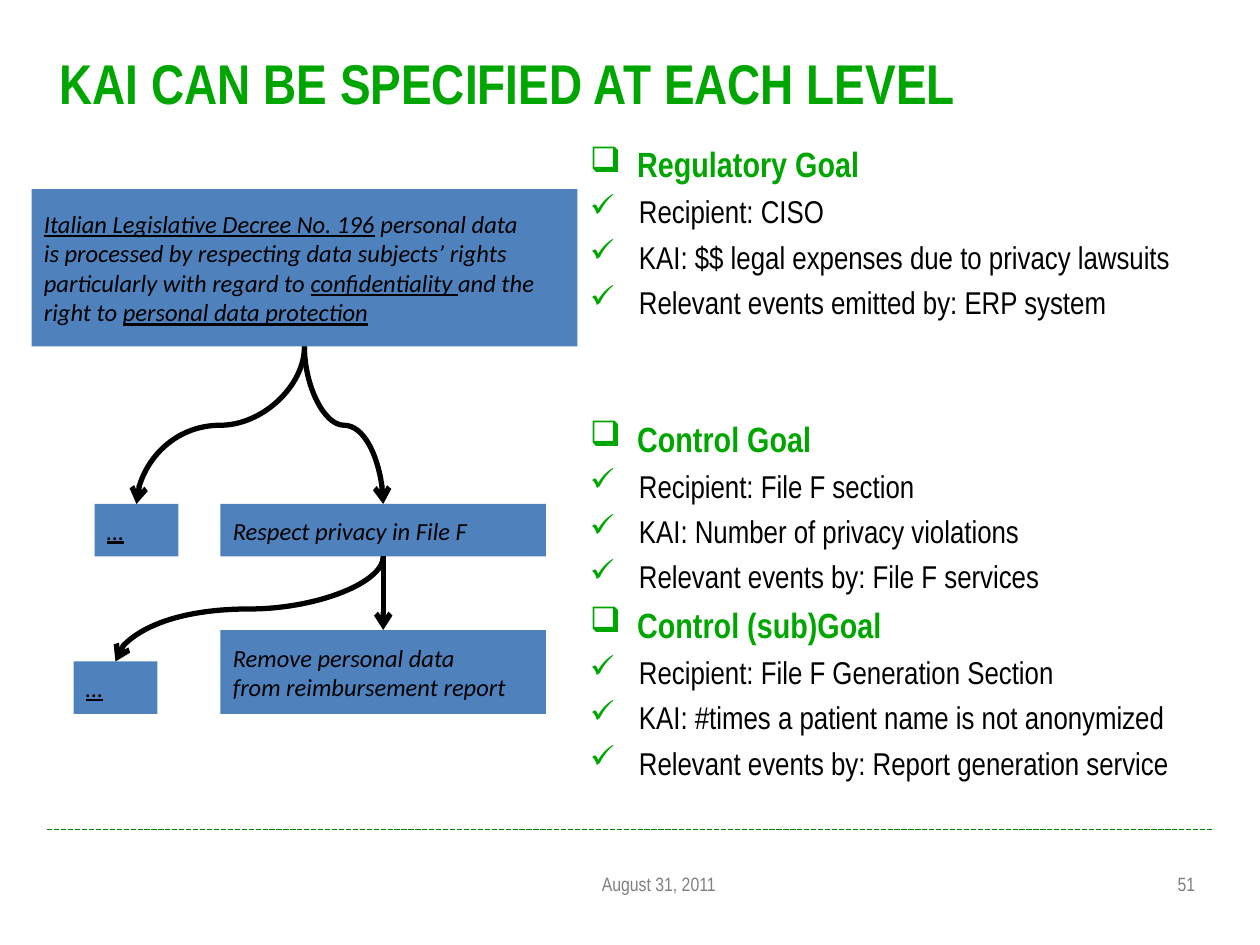
from dataclasses import dataclass

from lxml.etree import SubElement
from pptx import Presentation
from pptx.dml.color import RGBColor
from pptx.enum.dml import MSO_LINE
from pptx.enum.shapes import MSO_CONNECTOR as Link, MSO_SHAPE as Preset
from pptx.enum.text import MSO_ANCHOR as Anchor, PP_ALIGN as Align
from pptx.oxml.ns import qn
from pptx.util import Pt


@dataclass(frozen=True)
class Theme:
    green: RGBColor = RGBColor(0x00, 0xA6, 0x00)
    rule: RGBColor = RGBColor(0x00, 0x80, 0x00)
    box: RGBColor = RGBColor(0x4F, 0x81, 0xBD)
    ink: RGBColor = RGBColor(0, 0, 0)
    grey: RGBColor = RGBColor(0x7F, 0x7F, 0x7F)
    sans: str = "Arial Narrow"
    diagram_font: str = "Calibri"
    title: int = 32
    heading: int = 20
    detail: int = 18
    goal: int = 14
    footer: int = 11


THEME = Theme()

# Each group: gap above its heading, heading, details
INDICATORS = [
    (4.8, "Regulatory Goal", [
        "Recipient: CISO",
        "KAI: $$ legal expenses due to privacy lawsuits",
        "Relevant events emitted by: ERP system"]),
    (55, "Control Goal", [
        "Recipient: File F section",
        "KAI: Number of privacy violations",
        "Relevant events by: File F services"]),
    (4.8, "Control (sub)Goal", [
        "Recipient: File F Generation Section",
        "KAI: #times a patient name is not anonymized",
        "Relevant events by: Report generation service"]),
]

# Lines of (text, underlined) runs
DECREE = [
    [("Italian Legislative Decree No. 196", True), (" personal data", False)],
    [("is processed by respecting data subjects’ rights", False)],
    [("particularly with regard to ", False), ("confidentiality ", True), ("and the", False)],
    [("right to ", False), ("personal data protection", True)],
]
RESPECT = [[("Respect privacy in File F", False)]]
REMOVE = [[("Remove personal data", False)], [("from reimbursement report", False)]]
OTHER = [[("…", True)]]


def set_font(font, name, size, color, bold=False, italic=False):
    font.name, font.size, font.bold, font.italic = name, Pt(size), bold, italic
    font.color.rgb = color


def style_line(connector, color, width):
    connector.line.color.rgb = color
    connector.line.width = Pt(width)
    SubElement(connector._element.spPr, qn("a:effectLst"))


def add_label(slide, box, text, size, color, align=Align.LEFT, bold=False):
    frame = slide.shapes.add_textbox(*map(Pt, box)).text_frame
    frame.word_wrap = True
    frame.vertical_anchor = Anchor.MIDDLE
    frame.text = text
    line = frame.paragraphs[0]
    line.alignment = align
    set_font(line.runs[0].font, THEME.sans, size, color, bold)


def add_bullet(paragraph, symbol, indent):
    props = paragraph._p.get_or_add_pPr()
    props.set("marL", str(Pt(indent)))
    props.set("indent", str(-Pt(indent)))
    color = SubElement(SubElement(props, qn("a:buClr")), qn("a:srgbClr"))
    color.set("val", str(THEME.green))
    SubElement(props, qn("a:buChar")).set("char", symbol)


def add_indicators(slide, box):
    frame = slide.shapes.add_textbox(*map(Pt, box)).text_frame
    frame.word_wrap = True
    lines = []
    for gap, heading, details in INDICATORS:
        lines.append((heading, gap, "❑", 27, THEME.heading, THEME.green, True))
        lines += [(detail, 4.3, "✓", 28, THEME.detail, THEME.ink, False) for detail in details]
    frame.text = "\n".join(line[0] for line in lines)
    for paragraph, (_, gap, symbol, indent, size, color, bold) in zip(frame.paragraphs, lines):
        paragraph.space_before = Pt(gap)
        add_bullet(paragraph, symbol, indent)
        set_font(paragraph.runs[0].font, THEME.sans, size, color, bold)


def add_goal(slide, box, lines):
    goal = slide.shapes.add_shape(Preset.RECTANGLE, *map(Pt, box))
    goal.shadow.inherit = False
    goal.fill.solid()
    goal.fill.fore_color.rgb = THEME.box
    goal.line.fill.background()
    frame = goal.text_frame
    frame.word_wrap = True
    frame.vertical_anchor = Anchor.MIDDLE
    for number, pieces in enumerate(lines):
        paragraph = frame.add_paragraph() if number else frame.paragraphs[0]
        paragraph.alignment = Align.LEFT
        for text, underlined in pieces:
            run = paragraph.add_run()
            run.text = text
            set_font(run.font, THEME.diagram_font, THEME.goal, THEME.ink, italic=True)
            run.font.underline = underlined
    return goal


def link_goals(slide, parent, child):
    """Arrow from the bottom of the parent to the top of the child."""
    x1, y1 = parent.left + parent.width // 2, parent.top + parent.height
    x2, y2 = child.left + child.width // 2, child.top
    kind = Link.STRAIGHT if x1 == x2 else Link.CURVE
    arrow = slide.shapes.add_connector(kind, x1, y1, x2, y2)
    arrow.begin_connect(parent, 2)
    arrow.end_connect(child, 0)
    if kind == Link.CURVE:
        # A curve that leaves downwards is a sideways one turned by 90 degrees
        arrow.width, arrow.height = y2 - y1, abs(x2 - x1)
        arrow.left = (x1 + x2 - arrow.width) // 2
        arrow.top = (y1 + y2 - arrow.height) // 2
        frame = arrow._element.spPr.find(qn("a:xfrm"))
        frame.set("rot", str((270 if x2 > x1 else 90) * 60000))
        frame.set("flipH", "1" if x2 > x1 else "0")
    style_line(arrow, THEME.ink, 3)
    SubElement(arrow.line._get_or_add_ln(), qn("a:tailEnd")).set("type", "arrow")


def add_goal_tree(slide, box):
    left, top, width, _ = box
    decree = add_goal(slide, (left, top, width, 90), DECREE)
    respect = add_goal(slide, (left + 108, top + 180, 186, 30), RESPECT)
    other_goal = add_goal(slide, (left + 36, top + 180, 48, 30), OTHER)
    remove = add_goal(slide, (left + 108, top + 252, 186, 48), REMOVE)
    other_subgoal = add_goal(slide, (left + 24, top + 270, 48, 30), OTHER)
    for parent, child in [(decree, respect), (decree, other_goal),
                          (respect, remove), (respect, other_subgoal)]:
        link_goals(slide, parent, child)


def add_footer(slide, box):
    left, top, width, _ = box
    rule = slide.shapes.add_connector(
        Link.STRAIGHT, Pt(left), Pt(top), Pt(left + width), Pt(top))
    style_line(rule, THEME.rule, 1)
    rule.line.dash_style = MSO_LINE.SQUARE_DOT
    add_label(slide, (left + 306, top + 16.5, 87, 29), "August 31, 2011",
              THEME.footer, THEME.grey, Align.CENTER)
    add_label(slide, (left + 591, top + 16.5, 72, 29), "51",
              THEME.footer, THEME.grey, Align.RIGHT)


def main():
    deck = Presentation()
    deck.slide_width, deck.slide_height = Pt(720), Pt(540)
    slide = deck.slides.add_slide(deck.slide_layouts[6])
    add_label(slide, (27, 21.6, 666, 50.4), "KAI CAN BE SPECIFIED AT EACH LEVEL",
              THEME.title, THEME.green, bold=True)
    add_indicators(slide, (330, 78, 372, 384))
    add_goal_tree(slide, (18, 108, 312, 300))
    add_footer(slide, (27, 474, 666, 46))
    deck.save("out.pptx")


if __name__ == "__main__":
    main()
